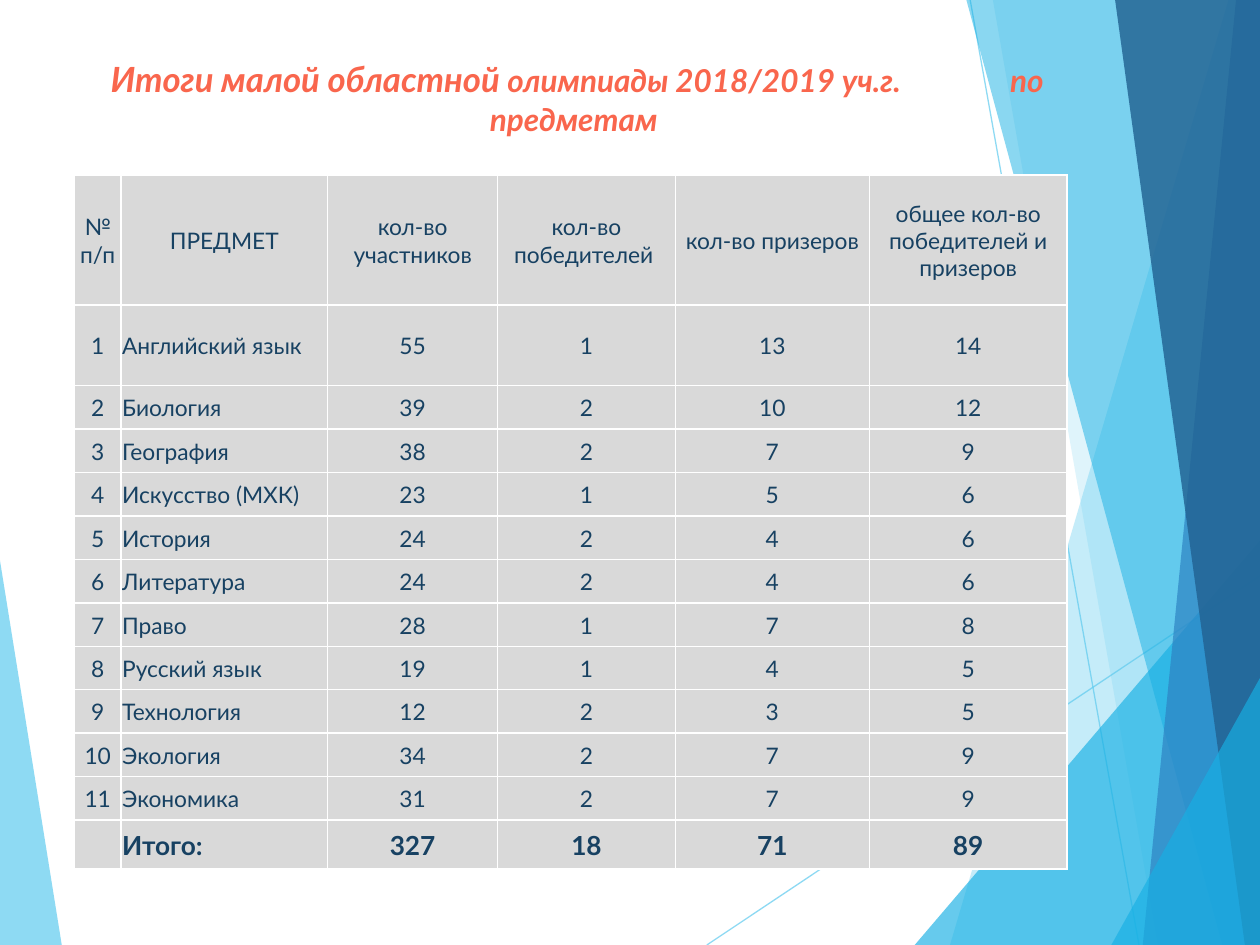
from lxml import etree
from pptx import Presentation
from pptx.dml.color import RGBColor
from pptx.enum.shapes import MSO_CONNECTOR
from pptx.enum.text import MSO_ANCHOR, MSO_AUTO_SIZE, PP_ALIGN
from pptx.oxml.ns import qn
from pptx.util import Inches, Pt

CENTER, LEFT = PP_ALIGN.CENTER, PP_ALIGN.LEFT
MIDDLE = MSO_ANCHOR.MIDDLE
NO_AUTOFIT = MSO_AUTO_SIZE.NONE
STRAIGHT = MSO_CONNECTOR.STRAIGHT

FONT = "Lato"
CORAL, NAVY, GREY, WHITE = "F9664D", "174162", "D9D9D9", "FFFFFF"
SKY, AZURE, BLUE, DEEP_BLUE = "5FCBEF", "17B0E4", "2E83C3", "226292"
W, H = 10, 7.5

# Corner points, colour and opacity in percent, from back to front
LEFT_WEDGE = ([(0, 4.45), (0.49, H), (0, H)], SKY, 70)
RIGHT_FACETS = [
    ([(9.75, 0), (7.54, H), (W, H), (W, 0)], SKY, 36),
    ([(7.88, 0), (9.19, H), (W, H), (W, 0)], SKY, 20),
    ([(7.26, H), (W, 4.29), (W, H)], AZURE, 66),
    ([(7.67, 0), (9.7, H), (W, H), (W, 0)], AZURE, 50),
    ([(9.81, 0), (9.07, H), (W, H), (W, 0)], BLUE, 70),
    ([(8.85, 0), (9.88, H), (W, H), (W, 0)], DEEP_BLUE, 82),
    ([(8.82, H), (W, 5.38), (W, H)], AZURE, 66),
]
THIN_LINES = [((5.61, H), (W, 4.57)), ((7.7, 0), (9.04, H))]

HEADINGS = ["№ п/п", "ПРЕДМЕТ", "кол-во участников", "кол-во победителей ",
            "кол-во призеров", "общее кол-во победителей и призеров"]
# Subject, participants, winners, prize-winners, winners and prize-winners
RESULTS = [
    ("Английский язык", 55, 1, 13, 14),
    ("Биология", 39, 2, 10, 12),
    ("География", 38, 2, 7, 9),
    ("Искусство (МХК)", 23, 1, 5, 6),
    ("История", 24, 2, 4, 6),
    ("Литература", 24, 2, 4, 6),
    ("Право", 28, 1, 7, 8),
    ("Русский язык", 19, 1, 4, 5),
    ("Технология", 12, 2, 3, 5),
    ("Экология", 34, 2, 7, 9),
    ("Экономика", 31, 2, 7, 9),
]
TOTALS = ["", "Итого:", 327, 18, 71, 89]

COLUMN_WIDTHS = [0.37, 1.64, 1.35, 1.41, 1.54, 1.57]
TABLE_HEIGHT = 5.51
HEADING_HEIGHT, FIRST_HEIGHT, TOTAL_HEIGHT = 1.03, 0.64, 0.39


def rgb(hex_color):
    return RGBColor.from_string(hex_color)


def set_opacity(properties, percent):
    color = properties.find(".//" + qn("a:srgbClr"))
    etree.SubElement(color, qn("a:alpha"), val=str(percent * 1000))


def add_facet(slide, corners, color, opacity):
    start, *others = [(Inches(x), Inches(y)) for x, y in corners]
    builder = slide.shapes.build_freeform(*start)
    builder.add_line_segments(others, close=True)
    facet = builder.convert_to_shape()
    facet.shadow.inherit = False
    facet.fill.solid()
    facet.fill.fore_color.rgb = rgb(color)
    set_opacity(facet._element.spPr, opacity)
    facet.line.fill.background()


def add_thin_line(slide, start, end):
    line = slide.shapes.add_connector(STRAIGHT, *map(Inches, start + end))
    line.line.color.rgb = rgb(SKY)
    line.line.width = Pt(0.75)
    properties = line._element.spPr
    set_opacity(properties, 70)
    etree.SubElement(properties, qn("a:effectLst"))


def add_run(paragraph, text, size, color, bold=False, italic=False):
    run = paragraph.add_run()
    run.text = text
    font = run.font
    font.name, font.size = FONT, Pt(size)
    font.bold, font.italic = bold, italic
    font.color.rgb = rgb(color)


def add_tab_stop(paragraph, position):
    tabs = etree.SubElement(paragraph._p.get_or_add_pPr(), qn("a:tabLst"))
    etree.SubElement(tabs, qn("a:tab"), pos=str(Inches(position)), algn="l")


def format_title(slide):
    title = slide.shapes.title
    title.left, title.top = Inches(0.69), Inches(0.4)
    title.width, title.height = Inches(7.78), Inches(0.75)
    frame = title.text_frame
    frame.word_wrap = True
    frame.auto_size = NO_AUTOFIT
    frame.vertical_anchor = MIDDLE
    heading = frame.paragraphs[0]
    heading.alignment = CENTER
    add_tab_stop(heading, 7.14)
    add_run(heading, "Итоги малой областной ", 19.8, CORAL, True, True)
    add_run(heading, "олимпиады 2018/2019 уч.г.\tпо предметам ", 18, CORAL, True, True)
    # The title stands in front of the facets
    slide.shapes._spTree.append(title._element)


def add_borders(cell):
    properties = cell._tc.get_or_add_tcPr()
    for side in ("lnL", "lnR", "lnT", "lnB"):
        border = etree.SubElement(properties, qn("a:" + side), w=str(Pt(1)))
        fill = etree.SubElement(border, qn("a:solidFill"))
        etree.SubElement(fill, qn("a:srgbClr"), val=WHITE)


def fill_cell(cell, value, alignment, size, bold):
    add_borders(cell)
    cell.fill.solid()
    cell.fill.fore_color.rgb = rgb(GREY)
    cell.vertical_anchor = MIDDLE
    cell.margin_left = cell.margin_right = cell.margin_top = Inches(0.01)
    cell.margin_bottom = 0
    paragraph = cell.text_frame.paragraphs[0]
    paragraph.alignment = alignment
    if value != "":
        add_run(paragraph, str(value), size, NAVY, bold)


def add_results_table(slide):
    numbered = [(number, *result) for number, result in enumerate(RESULTS, 1)]
    rows = [HEADINGS, *numbered, TOTALS]
    plain_count = len(RESULTS) - 1
    plain_height = (TABLE_HEIGHT - HEADING_HEIGHT - FIRST_HEIGHT - TOTAL_HEIGHT) / plain_count
    heights = [HEADING_HEIGHT, FIRST_HEIGHT, *[plain_height] * plain_count, TOTAL_HEIGHT]

    table = slide.shapes.add_table(
        len(rows), len(HEADINGS), Inches(0.59), Inches(1.39),
        Inches(sum(COLUMN_WIDTHS)), Inches(TABLE_HEIGHT)).table
    for column, width in zip(table.columns, COLUMN_WIDTHS):
        column.width = Inches(width)
    for r, (values, height) in enumerate(zip(rows, heights)):
        table.rows[r].height = Inches(height)
        is_total = values is TOTALS
        for c, value in enumerate(values):
            alignment = LEFT if c == 1 and r > 0 else CENTER
            fill_cell(table.cell(r, c), value, alignment, 15 if is_total else 13, is_total)


def main():
    presentation = Presentation()
    presentation.slide_width, presentation.slide_height = Inches(W), Inches(H)
    slide = presentation.slides.add_slide(presentation.slide_layouts[5])
    add_facet(slide, *LEFT_WEDGE)
    for start, end in THIN_LINES:
        add_thin_line(slide, start, end)
    for facet in RIGHT_FACETS:
        add_facet(slide, *facet)
    format_title(slide)
    add_results_table(slide)
    presentation.save("out.pptx")


if __name__ == "__main__":
    main()
